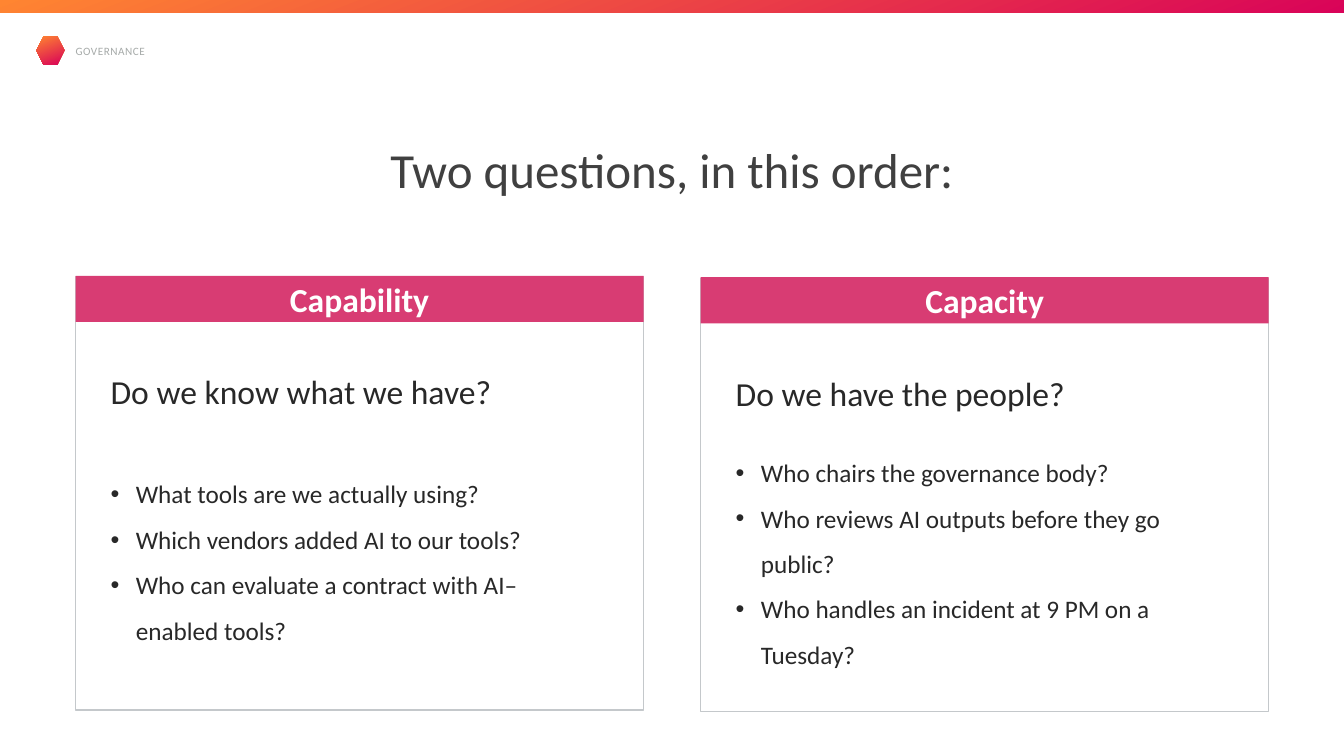
import pptx
import pptx.dml.color
import pptx.enum.shapes
import pptx.enum.text
import pptx.oxml
import pptx.oxml.ns
import pptx.util

Pt = pptx.util.Pt
Align = pptx.enum.text.PP_ALIGN
Anchor = pptx.enum.text.MSO_ANCHOR
Preset = pptx.enum.shapes.MSO_SHAPE

COLOURS = {
    "orange": "FF8531",
    "magenta": "D90359",
    "band": "D83C73",
    "frame": "C4C8CB",
    "title": "404040",
    "text": "282828",
    "label": "A6AAA9",
    "white": "FFFFFF",
}


def colour(name):
    return pptx.dml.color.RGBColor.from_string(COLOURS[name])


class SlideBuilder:
    """Holds the style and the current slide."""

    font = "Calibri"
    inset = 4
    indent = 36
    card_width = 811.5

    def __init__(self, slide):
        self.slide = slide

    def place(self, shape, left, top, width, height):
        box = {"left": left, "top": top, "width": width, "height": height}
        for name, value in box.items():
            setattr(shape, name, Pt(value))

    def fill_text(self, shape, lines, size, colour_name, bold=False, align=Align.LEFT,
                  anchor=Anchor.MIDDLE, inset=inset, wrap=True, bullets=False):
        frame = shape.text_frame
        frame_format = {"word_wrap": wrap, "vertical_anchor": anchor,
                        "auto_size": pptx.enum.text.MSO_AUTO_SIZE.NONE}
        for side in ("left", "top", "right", "bottom"):
            frame_format["margin_" + side] = Pt(inset)
        for name, value in frame_format.items():
            setattr(frame, name, value)
        frame.text = "\n".join(lines)
        for paragraph in frame.paragraphs:
            if bullets:
                self.add_bullet(paragraph)
            paragraph_format = {"alignment": align, "space_before": Pt(0),
                                "line_spacing": 1.5 if bullets else 1.0}
            for name, value in paragraph_format.items():
                setattr(paragraph, name, value)
            font_format = {"name": self.font, "size": Pt(size), "bold": bold}
            for run in paragraph.runs:
                for name, value in font_format.items():
                    setattr(run.font, name, value)
                run.font.color.rgb = colour(colour_name)

    def add_bullet(self, paragraph):
        properties = paragraph._p.get_or_add_pPr()
        properties.set("marL", str(Pt(self.indent)))
        properties.set("indent", str(-Pt(self.indent)))
        bullet = pptx.oxml.parse_xml(
            f'<a:buChar {pptx.oxml.ns.nsdecls("a")} char="•"/>')
        properties.append(bullet)

    def shape(self, preset, box, fill=None, line=None):
        shape = self.slide.shapes.add_shape(preset, *map(Pt, box))
        shape.shadow.inherit = False
        if fill:
            shape.fill.solid()
            shape.fill.fore_color.rgb = colour(fill)
        else:
            shape.fill.background()
        if line:
            shape.line.color.rgb = colour(line)
            shape.line.width = Pt(2)
        else:
            shape.line.fill.background()
        return shape

    def gradient_shape(self, preset, box):
        shape = self.shape(preset, box)
        shape.fill.gradient()
        shape.fill.gradient_angle = 291
        for stop, name in zip(shape.fill.gradient_stops, ("orange", "magenta")):
            stop.color.rgb = colour(name)

    def text(self, box, line, size, colour_name, **options):
        shape = self.slide.shapes.add_textbox(*map(Pt, box))
        self.fill_text(shape, [line], size, colour_name, **options)
        return shape

    def title(self, line):
        shape = self.slide.shapes.title
        self.place(shape, 5, 193.5, 1910, 89.5)
        self.fill_text(shape, [line], 70, "title", align=Align.CENTER,
                       anchor=Anchor.BOTTOM, inset=0)

    def card(self, placeholder, left, top, heading, question, items):
        width = self.card_width
        text_left = left + 46
        self.shape(Preset.RECTANGLE, (left, top + 1.5, width, 619), line="frame")
        band = self.shape(Preset.RECTANGLE, (left, top, width, 66), fill="band")
        self.fill_text(band, [heading], 48, "white", bold=True, align=Align.CENTER)
        self.text((text_left, top + 132, 593, 66), question, 48, "text", wrap=False)
        self.place(placeholder, text_left, top + 230, 697.5, 336)
        self.fill_text(placeholder, items, 36, "text", bullets=True)


def main():
    presentation = pptx.Presentation()
    presentation.slide_width = Pt(1920)
    presentation.slide_height = Pt(1080)
    two_content = presentation.slide_layouts[3]
    slide = presentation.slides.add_slide(two_content)
    builder = SlideBuilder(slide)

    # Header: top bar, plain mark and section label
    builder.gradient_shape(Preset.RECTANGLE, (0, 0, 1920, 18))
    builder.gradient_shape(Preset.HEXAGON, (52, 52, 40, 40))
    label = builder.text((108, 63.5, 1078, 19.5), "GOVERNANCE", 16, "label", inset=0)
    label_run = label.text_frame.paragraphs[0].runs[0]
    label_run._r.get_or_add_rPr().set("spc", "80")

    builder.title("Two questions, in this order:")

    # The two question cards
    cards = [
        (108, 394, "Capability", "Do we know what we have?",
         ["What tools are we actually using?",
          "Which vendors added AI to our tools?",
          "Who can evaluate a contract with AI–enabled tools?"]),
        (1001, 396, "Capacity", "Do we have the people?",
         ["Who chairs the governance body?",
          "Who reviews AI outputs before they go public?",
          "Who handles an incident at 9 PM on a Tuesday?"]),
    ]
    for index, card in enumerate(cards, start=1):
        builder.card(slide.placeholders[index], *card)

    presentation.save("out.pptx")


if __name__ == "__main__":
    main()
